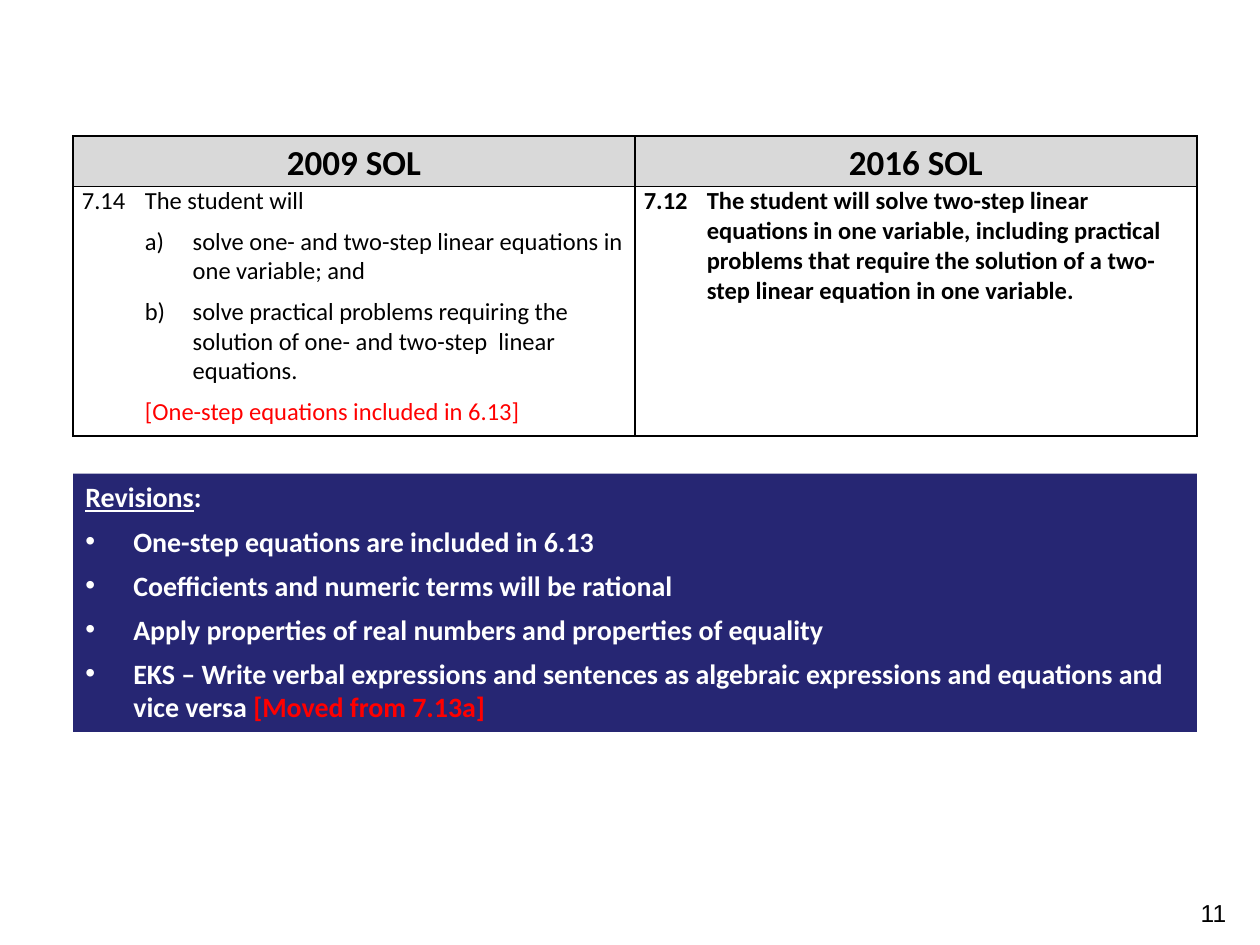
"""Build the slide that compares the 2009 and 2016 standards and lists the revisions."""
from dataclasses import dataclass

import pptx
import pptx.dml.color
import pptx.enum.shapes
import pptx.enum.text
import pptx.oxml.ns
import pptx.util
from lxml import etree
from pptx.util import Inches

ALIGN = pptx.enum.text.PP_ALIGN


@dataclass(frozen=True)
class Theme:
    body_font: str = "Calibri"
    number_font: str = "Arial"
    ink: str = "000000"
    paper: str = "FFFFFF"
    accent: str = "FF0000"
    header_fill: str = "D9D9D9"
    panel_fill: str = "262673"
    header_size: int = 20
    panel_size: int = 16
    body_size: int = 14
    paragraph_gap: int = 6
    border_width: int = 1


THEME = Theme()
LEFT, WIDTH = Inches(0.58), Inches(8.92)

HEADINGS = ["2009 SOL", "2016 SOL"]
STANDARD_2009 = [
    ("7.14\tThe student will", 0.5, -0.5, THEME.ink),
    ("a)\tsolve one- and two-step linear equations in one variable; and", 0.88, -0.38, THEME.ink),
    ("b)\tsolve practical problems requiring the solution of one- and two-step  linear equations.",
     0.88, -0.38, THEME.ink),
    ("[One-step equations included in 6.13]", 0.88, -0.38, THEME.accent),
]
STANDARD_2016 = [
    ("7.12\tThe student will solve two-step linear equations in one variable, including practical "
     "problems that require the solution of a two-step linear equation in one variable.",
     0.5, -0.5, THEME.ink),
]
REVISIONS = [
    "One-step equations are included in 6.13",
    "Coefficients and numeric terms will be rational",
    "Apply properties of real numbers and properties of equality",
    "EKS – Write verbal expressions and sentences as algebraic expressions and equations and vice versa ",
]
MOVED_NOTE = "[Moved from 7.13a]"


def rgb(value):
    return pptx.dml.color.RGBColor.from_string(value)


def style_run(run, size, color, bold=False, font=THEME.body_font):
    run.font.name = font
    run.font.size = pptx.util.Pt(size)
    run.font.bold = bold
    run.font.color.rgb = rgb(color)


def indent_paragraph(paragraph, margin, first_line):
    properties = paragraph._p.get_or_add_pPr()
    properties.set("marL", str(Inches(margin)))
    properties.set("indent", str(Inches(first_line)))
    return properties


def add_bullet(paragraph):
    properties = indent_paragraph(paragraph, 0.38, -0.38)
    for tag, name, value in [("a:buFont", "typeface", THEME.number_font), ("a:buChar", "char", "•")]:
        etree.SubElement(properties, pptx.oxml.ns.qn(tag)).set(name, value)


def format_cell(cell, fill):
    cell.margin_left = cell.margin_right = Inches(0.07)
    cell.margin_top = cell.margin_bottom = 0
    properties = cell._tc.get_or_add_tcPr()
    for side in ("L", "R", "T", "B"):
        border = etree.SubElement(properties, pptx.oxml.ns.qn(f"a:ln{side}"))
        border.set("w", str(pptx.util.Pt(THEME.border_width)))
        solid = etree.SubElement(border, pptx.oxml.ns.qn("a:solidFill"))
        etree.SubElement(solid, pptx.oxml.ns.qn("a:srgbClr")).set("val", THEME.ink)
    cell.fill.solid()
    cell.fill.fore_color.rgb = rgb(fill)


def fill_heading(cell, heading):
    format_cell(cell, THEME.header_fill)
    cell.text_frame.text = heading
    paragraph = cell.text_frame.paragraphs[0]
    paragraph.alignment = ALIGN.CENTER
    paragraph.line_spacing = 1.15
    style_run(paragraph.runs[0], THEME.header_size, THEME.ink, bold=True)


def fill_standard(cell, clauses, bold):
    format_cell(cell, THEME.paper)
    cell.text_frame.text = "\n".join(clause[0] for clause in clauses)
    for index, (paragraph, clause) in enumerate(zip(cell.text_frame.paragraphs, clauses)):
        _, margin, first_line, color = clause
        if index:
            paragraph.space_before = pptx.util.Pt(THEME.paragraph_gap)
        indent_paragraph(paragraph, margin, first_line)
        style_run(paragraph.runs[0], THEME.body_size, color, bold)


def add_comparison(slide):
    comparison = slide.shapes.add_table(2, 2, LEFT, Inches(1.08), WIDTH, Inches(2.38)).table
    for row, height in zip(comparison.rows, (0.4, 1.98)):
        row.height = Inches(height)
    for column, heading in enumerate(HEADINGS):
        fill_heading(comparison.cell(0, column), heading)
    fill_standard(comparison.cell(1, 0), STANDARD_2009, bold=False)
    fill_standard(comparison.cell(1, 1), STANDARD_2016, bold=True)


def add_revisions(slide):
    panel = slide.shapes.add_shape(
        pptx.enum.shapes.MSO_SHAPE.RECTANGLE, LEFT, Inches(3.76), WIDTH, Inches(2.05))
    panel.shadow.inherit = False
    panel.fill.solid()
    panel.fill.fore_color.rgb = rgb(THEME.panel_fill)
    panel.line.fill.background()
    frame = panel.text_frame
    frame.word_wrap = True
    frame.vertical_anchor = pptx.enum.text.MSO_ANCHOR.TOP
    frame.auto_size = pptx.enum.text.MSO_AUTO_SIZE.SHAPE_TO_FIT_TEXT
    frame.text = "\n".join(["Revisions", *REVISIONS])
    title, *items = frame.paragraphs
    title.add_run().text = ":"
    for item in items:
        item.space_before = pptx.util.Pt(THEME.paragraph_gap)
        add_bullet(item)
    for paragraph in frame.paragraphs:
        paragraph.alignment = ALIGN.LEFT
        for run in paragraph.runs:
            style_run(run, THEME.panel_size, THEME.paper, bold=True)
    title.runs[0].font.underline = True
    moved = items[-1].add_run()
    moved.text = MOVED_NOTE
    style_run(moved, THEME.panel_size, THEME.accent, bold=True)


def add_page_number(slide, number):
    frame = slide.shapes.add_textbox(
        Inches(7.5), Inches(7.08), Inches(2.33), Inches(0.52)).text_frame
    frame.word_wrap = True
    frame.text = number
    paragraph = frame.paragraphs[0]
    paragraph.alignment = ALIGN.RIGHT
    style_run(paragraph.runs[0], THEME.body_size, THEME.ink, font=THEME.number_font)


def main():
    presentation = pptx.Presentation()
    presentation.slide_width, presentation.slide_height = Inches(10), Inches(7.5)
    slide = presentation.slides.add_slide(presentation.slide_layouts[6])
    add_comparison(slide)
    add_revisions(slide)
    add_page_number(slide, "11")
    presentation.save("out.pptx")


if __name__ == "__main__":
    main()
